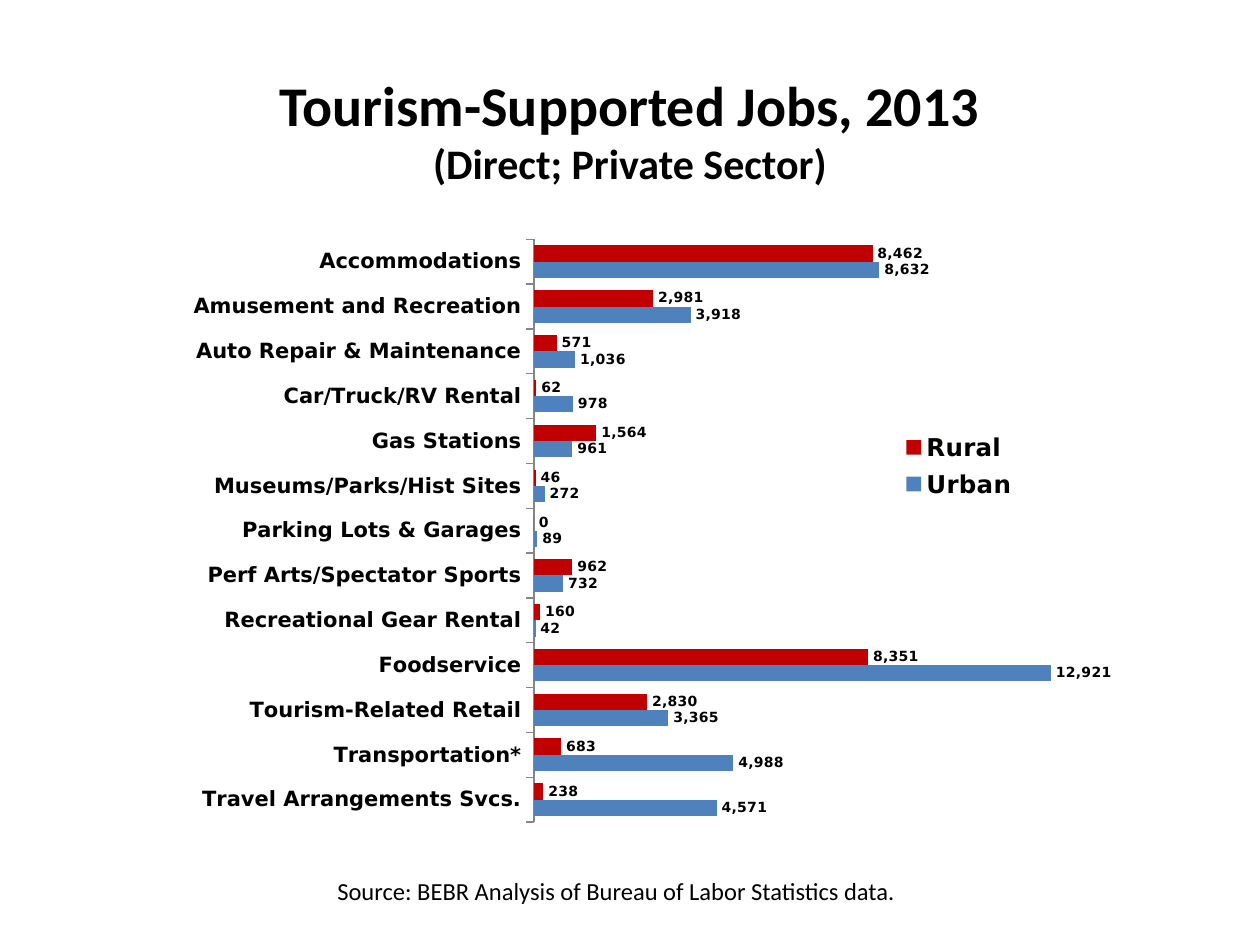
from lxml import etree
from pptx import Presentation
from pptx.chart.data import CategoryChartData
from pptx.dml.color import RGBColor
from pptx.enum.chart import (XL_CHART_TYPE as CT, XL_LABEL_POSITION as LP,
                             XL_LEGEND_POSITION as LEG, XL_TICK_LABEL_POSITION as TLP,
                             XL_TICK_MARK as TM)
from pptx.enum.text import MSO_ANCHOR as ANCHOR, PP_ALIGN as ALIGN
from pptx.oxml.ns import qn
from pptx.util import Cm, Pt


def style(font, size, name, bold=False, color="000000"):
    values = {"size": Pt(size), "name": name, "bold": bold}
    for key, value in values.items():
        setattr(font, key, value)
    font.color.rgb = RGBColor.from_string(color)


def place(parent, index, box, inner=False):
    """Give a plot area or legend a fixed box, in fractions of the chart."""
    for old in parent.findall(qn("c:layout")):
        parent.remove(old)
    layout = etree.Element(qn("c:layout"))
    manual = etree.SubElement(layout, qn("c:manualLayout"))
    parts = [("layoutTarget", "inner")] if inner else []
    parts += [("xMode", "edge"), ("yMode", "edge"), *zip("xywh", box)]
    for tag, value in parts:
        etree.SubElement(manual, qn(f"c:{tag}")).set("val", str(value))
    parent.insert(index, layout)


prs = Presentation()
prs.slide_width, prs.slide_height = Cm(25.4), Cm(19.05)
s = prs.slides.add_slide(prs.slide_layouts[5])

# Title
sp = s.shapes.title
box = {"left": 1.27, "top": 0.76, "width": 22.86, "height": 3.68}
for key, value in box.items():
    setattr(sp, key, Cm(value))
tf = sp.text_frame
tf.vertical_anchor = ANCHOR.MIDDLE
p = tf.paragraphs[0]
p.alignment = ALIGN.CENTER
r = p.add_run()
r.text = "Tourism-Supported Jobs, 2013"
style(r.font, 32, "Calibri", True)
p.add_line_break()
r = p.add_run()
r.text = "(Direct; Private Sector)"
style(r.font, 24, "Calibri", True)

# Jobs by industry, listed from the bottom bar up: (industry, urban, rural)
jobs = [
    ("Travel Arrangements Svcs.", 4571, 238),
    ("Transportation*", 4988, 683),
    ("Tourism-Related Retail", 3365, 2830),
    ("Foodservice", 12921, 8351),
    ("Recreational Gear Rental", 42, 160),
    ("Perf Arts/Spectator Sports", 732, 962),
    ("Parking Lots & Garages", 89, 0),
    ("Museums/Parks/Hist Sites", 272, 46),
    ("Gas Stations", 961, 1564),
    ("Car/Truck/RV Rental", 978, 62),
    ("Auto Repair & Maintenance", 1036, 571),
    ("Amusement and Recreation", 3918, 2981),
    ("Accommodations", 8632, 8462),
]
industries, urban, rural = zip(*jobs)
data = CategoryChartData(number_format="#,##0")
data.categories = industries
data.add_series("Urban", urban)
data.add_series("Rural", rural)
chart = s.shapes.add_chart(CT.BAR_CLUSTERED, Cm(2.97), Cm(4.45),
                           Cm(19.48), Cm(12.5), data).chart
chart.has_title = False
style(chart.font, 8, "DejaVu Sans", True)

# Bars and their values
plot = chart.plots[0]
plot.gap_width, plot.overlap, plot.vary_by_categories = 75, 0, False
for series, color in zip(plot.series, ("4F81BD", "C00000")):
    series.format.fill.solid()
    series.format.fill.fore_color.rgb = RGBColor.from_string(color)
    labels = series.data_labels
    values = {"show_value": True, "number_format": "#,##0",
              "number_format_is_linked": False, "position": LP.OUTSIDE_END}
    for key, value in values.items():
        setattr(labels, key, value)
    style(labels.font, 8, "DejaVu Sans", True)

# Axes
cat, val = chart.category_axis, chart.value_axis
cat.major_tick_mark = TM.OUTSIDE
cat.tick_label_position = TLP.LOW
cat.format.line.color.rgb = RGBColor.from_string("868686")
cat.format.line.width = Pt(0.75)
style(cat.tick_labels.font, 12, "DejaVu Sans", True)
val.minimum_scale, val.maximum_scale = 0, 14000
val.has_major_gridlines = False
val.visible = False

# Legend and plot positions
chart.has_legend = True
chart.legend.position = LEG.RIGHT
chart.legend.include_in_layout = False
style(chart.legend.font, 14, "DejaVu Sans", True)
legend = next(chart.element.iter(qn("c:legend")))
place(legend, 1, (0.76, 0.33, 0.16, 0.13))
area = next(chart.element.iter(qn("c:plotArea")))
place(area, 0, (0.4, 0.03, 0.58, 0.94), inner=True)

# Source note
sp = s.shapes.add_textbox(Cm(6.55), Cm(17.53), Cm(15.04), Cm(0.86))
tf = sp.text_frame
tf.word_wrap = True
r = tf.paragraphs[0].add_run()
r.text = "Source: BEBR Analysis of Bureau of Labor Statistics data."
style(r.font, 14, "Calibri")

prs.save("out.pptx")
